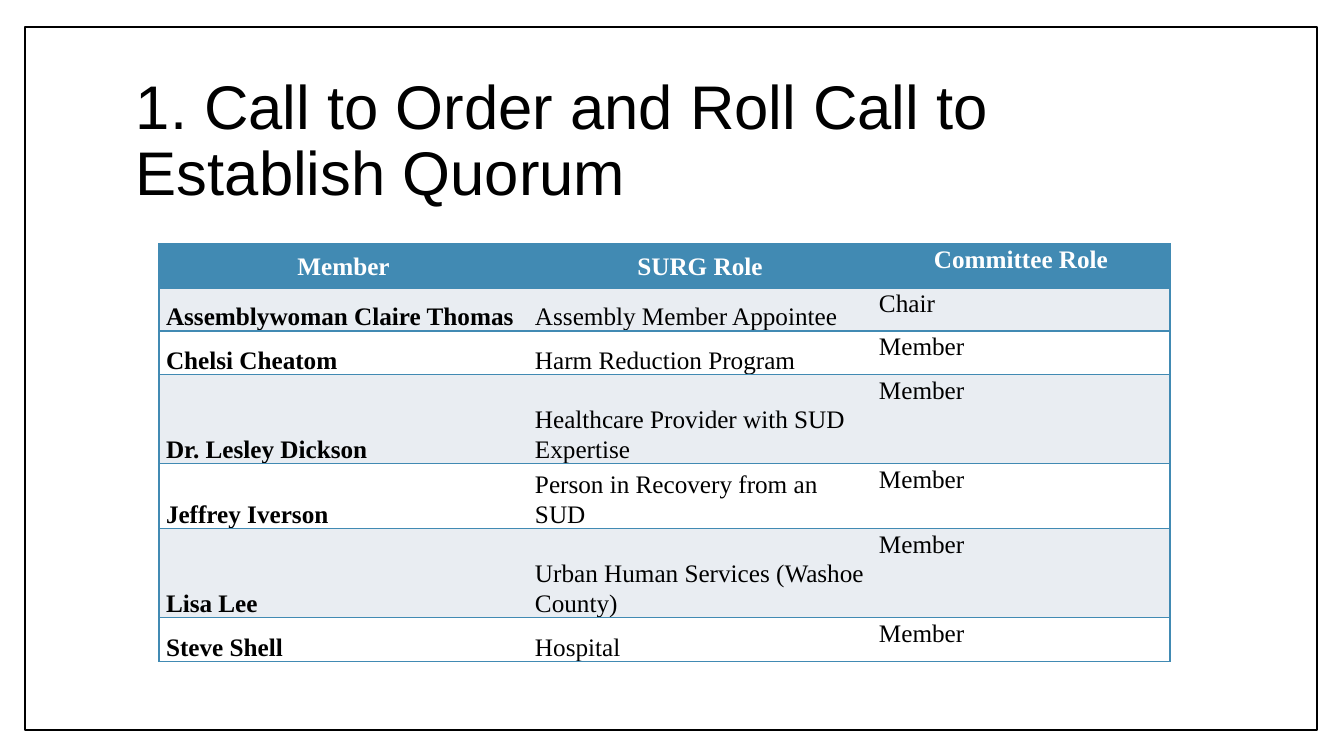
"""Build the roll call slide with its committee member table."""
from dataclasses import dataclass

from lxml.etree import SubElement
from pptx import Presentation
from pptx.dml.color import RGBColor
from pptx.enum.shapes import MSO_SHAPE as Shape
from pptx.enum.text import MSO_ANCHOR as Anchor, PP_ALIGN as Align
from pptx.oxml.ns import qn
from pptx.util import Pt

EMU_PER_PX = 914400 / 100.8
COLORS = {"black": "000000", "white": "FFFFFF", "blue": "418AB3", "band": "E9EDF2"}
TITLE = "1. Call to Order and Roll Call to Establish Quorum"
HEADERS = ("Member", "SURG Role", "Committee Role")
COLUMN_WIDTHS = (369, 344, 298)
HEADER_HEIGHT = 44


@dataclass(frozen=True)
class Member:
    name: str
    surg_role: str
    committee_role: str
    height: int


MEMBERS = (
    Member("Assemblywoman Claire Thomas", "Assembly Member Appointee", "Chair", 43),
    Member("Chelsi Cheatom", "Harm Reduction Program", "Member", 44),
    Member("Dr. Lesley Dickson", "Healthcare Provider with SUD Expertise", "Member", 89),
    Member("Jeffrey Iverson", "Person in Recovery from an SUD", "Member", 60),
    Member("Lisa Lee", "Urban Human Services (Washoe County)", "Member", 89),
    Member("Steve Shell", "Hospital", "Member", 44),
)


def px(length: int) -> int:
    return round(length * EMU_PER_PX)


def color(name: str) -> RGBColor:
    return RGBColor.from_string(COLORS[name])


def format_text(paragraph, font_name: str, size: int, color_name: str, spacing: float, bold: bool = False) -> None:
    paragraph.line_spacing = spacing
    for run in paragraph.runs:
        run.font.name = font_name
        run.font.size = Pt(size)
        run.font.bold = bold
        run.font.color.rgb = color(color_name)


def add_frame(slide) -> None:
    frame = slide.shapes.add_shape(Shape.RECTANGLE, px(25), px(27), px(1292), px(703))
    frame.shadow.inherit = False
    frame.fill.solid()
    frame.fill.fore_color.rgb = color("white")
    frame.line.color.rgb = color("black")
    frame.line.width = Pt(1)


def add_title(slide) -> None:
    title = slide.shapes.add_textbox(px(126), px(68), px(1089), px(149))
    text_frame = title.text_frame
    text_frame.word_wrap = True
    text_frame.vertical_anchor = Anchor.MIDDLE
    text_frame.text = TITLE
    format_text(text_frame.paragraphs[0], "Arial", 44, "black", 0.9)


def set_borders(cell, visible_sides: str) -> None:
    properties = cell._tc.get_or_add_tcPr()
    for side in "LRTB":
        line = SubElement(properties, qn(f"a:ln{side}"), w=str(Pt(1)))
        if side in visible_sides:
            fill = SubElement(line, qn("a:solidFill"))
            SubElement(fill, qn("a:srgbClr"), val=COLORS["blue"])
        else:
            SubElement(line, qn("a:noFill"))


def fill_cell(cell, text: str, row: int, column: int) -> None:
    is_header = row == 0
    cell.margin_left = cell.margin_right = px(7)
    cell.margin_top = cell.margin_bottom = 0
    if column == 2:
        cell.vertical_anchor = Anchor.TOP
    else:
        cell.vertical_anchor = Anchor.MIDDLE if is_header else Anchor.BOTTOM
    set_borders(cell, ("LTB", "TB", "RTB")[column])
    cell.fill.solid()
    cell.fill.fore_color.rgb = color("blue" if is_header else ("white", "band")[row % 2])
    cell.text_frame.text = text
    paragraph = cell.text_frame.paragraphs[0]
    paragraph.alignment = Align.CENTER if is_header else Align.LEFT
    text_color = "white" if is_header else "black"
    format_text(paragraph, "Times New Roman", 18, text_color, 1.07, is_header or column == 0)


def add_member_table(slide) -> None:
    rows = [HEADERS] + [(member.name, member.surg_role, member.committee_role) for member in MEMBERS]
    heights = [HEADER_HEIGHT] + [member.height for member in MEMBERS]
    table = slide.shapes.add_table(
        len(rows), len(HEADERS), px(159), px(244), px(sum(COLUMN_WIDTHS)), px(sum(heights))
    ).table
    table.first_row = table.horz_banding = False
    for column, width in zip(table.columns, COLUMN_WIDTHS):
        column.width = px(width)
    for row, (texts, height) in enumerate(zip(rows, heights)):
        table.rows[row].height = px(height)
        for column, text in enumerate(texts):
            fill_cell(table.cell(row, column), text, row, column)


def main() -> None:
    presentation = Presentation()
    presentation.slide_width = px(1344)
    presentation.slide_height = px(756)
    slide = presentation.slides.add_slide(presentation.slide_layouts[6])
    add_frame(slide)
    add_title(slide)
    add_member_table(slide)
    presentation.save("out.pptx")


if __name__ == "__main__":
    main()
